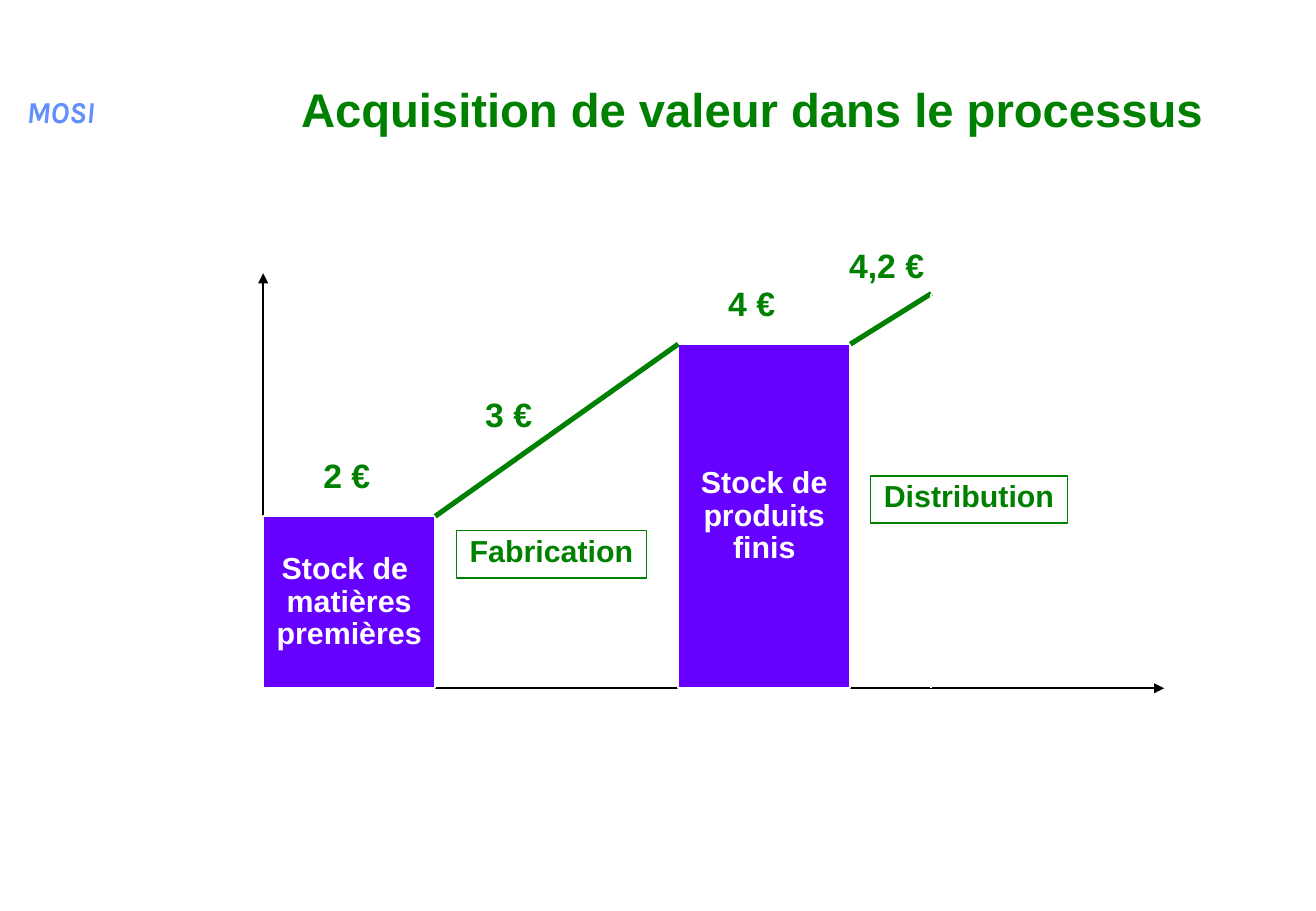
import pptx
import pptx.util
import pptx.dml.color
import pptx.enum.text
import pptx.enum.shapes
import pptx.oxml.ns
import lxml.etree

Pt = pptx.util.Pt
Align = pptx.enum.text.PP_ALIGN
Anchor = pptx.enum.text.MSO_ANCHOR
Fit = pptx.enum.text.MSO_AUTO_SIZE
Rect = pptx.enum.shapes.MSO_SHAPE.RECTANGLE
Straight = pptx.enum.shapes.MSO_CONNECTOR.STRAIGHT

rgb = pptx.dml.color.RGBColor.from_string
theme = {
    "green": rgb("008000"), "violet": rgb("6600FF"), "sky": rgb("618FFD"),
    "white": rgb("FFFFFF"), "black": rgb("000000"),
    "title": Pt(28), "price": Pt(20), "body": Pt(18),
    "thin": Pt(1), "thick": Pt(3),
}


def write(shape, text, size, color, align=Align.CENTER, font="Arial", **frame):
    for name, value in frame.items():
        setattr(shape.text_frame, name, value)
    shape.text_frame.text = text
    style = {"name": font, "size": theme[size], "bold": True}
    for para in shape.text_frame.paragraphs:
        para.alignment = align
        para.line_spacing = 0.9
        for run in para.runs:
            for name, value in style.items():
                setattr(run.font, name, value)
            run.font.color.rgb = theme[color]


def draw(start, end, color, width, arrow=False):
    line = slide.shapes.add_connector(Straight, *map(Pt, start + end))
    line.line.color.rgb = theme[color]
    line.line.width = theme[width]
    if arrow:
        tail = lxml.etree.SubElement(line.line._get_or_add_ln(), pptx.oxml.ns.qn("a:tailEnd"))
        tail.set("type", "triangle")
    lxml.etree.SubElement(line._element.spPr, pptx.oxml.ns.qn("a:effectLst"))


deck = pptx.Presentation()
deck.slide_width, deck.slide_height = Pt(780), Pt(540)
slide = deck.slides.add_slide(deck.slide_layouts[6])

# Header
mark = slide.shapes.add_textbox(Pt(0), Pt(54), Pt(72), Pt(26.6))
write(mark, "MOSI", "body", "sky", font="Karla", word_wrap=True)
mark.text_frame.paragraphs[0].runs[0].font.italic = True
title = slide.shapes.add_textbox(Pt(60), Pt(48), Pt(660), Pt(90))
write(title, "Acquisition de valeur dans le processus", "title", "green",
      Align.RIGHT, word_wrap=True)

# Axes
left, base = 156, 408
draw((left, base), (left, 162), "black", "thin", True)
draw((left, base), (690, base), "black", "thin", True)

# Stock bars, with height in proportion to value
wide, euro = 102, 51
stocks = [
    (left, 2, "Stock de \nmatières\npremières"),
    (402, 4, "Stock de\nproduits\nfinis"),
]
for x, value, text in stocks:
    bar = slide.shapes.add_shape(Rect, Pt(x), Pt(base - value * euro), Pt(wide), Pt(value * euro))
    bar.shadow.inherit = False
    bar.fill.solid()
    bar.fill.fore_color.rgb = theme["violet"]
    bar.line.color.rgb = theme["white"]
    bar.line.width = theme["thin"]
    write(bar, text, "body", "white", word_wrap=False, vertical_anchor=Anchor.MIDDLE)

# Rising value between stocks
low, high, end = base - 2 * euro, base - 4 * euro, (552, 174)
draw((left + wide, low), (402, high), "green", "thick")
draw((402 + wide, high), end, "green", "thick")
draw(end, (end[0], base), "white", "thin")

# Prices
prices = [
    ("2 €", 184.3, 268.5, 42.5), ("3 €", 280.3, 232.5, 42.5),
    ("4 €", 424.3, 166.5, 42.5), ("4,2 €", 496, 144, 59),
]
for text, x, y, width in prices:
    price = slide.shapes.add_textbox(Pt(x), Pt(y), Pt(width), Pt(28.8))
    write(price, text, "price", "green", word_wrap=False, auto_size=Fit.SHAPE_TO_FIT_TEXT)

# Process steps
for text, x, y, width in [("Fabrication", 270.6, 314.5, 112.6), ("Distribution", 516, 282, 116.8)]:
    step = slide.shapes.add_shape(Rect, Pt(x), Pt(y), Pt(width), Pt(28))
    step.shadow.inherit = False
    step.fill.background()
    step.line.color.rgb = theme["green"]
    step.line.width = theme["thin"]
    write(step, text, "body", "green", word_wrap=False,
          vertical_anchor=Anchor.TOP, auto_size=Fit.SHAPE_TO_FIT_TEXT)

deck.save("out.pptx")
